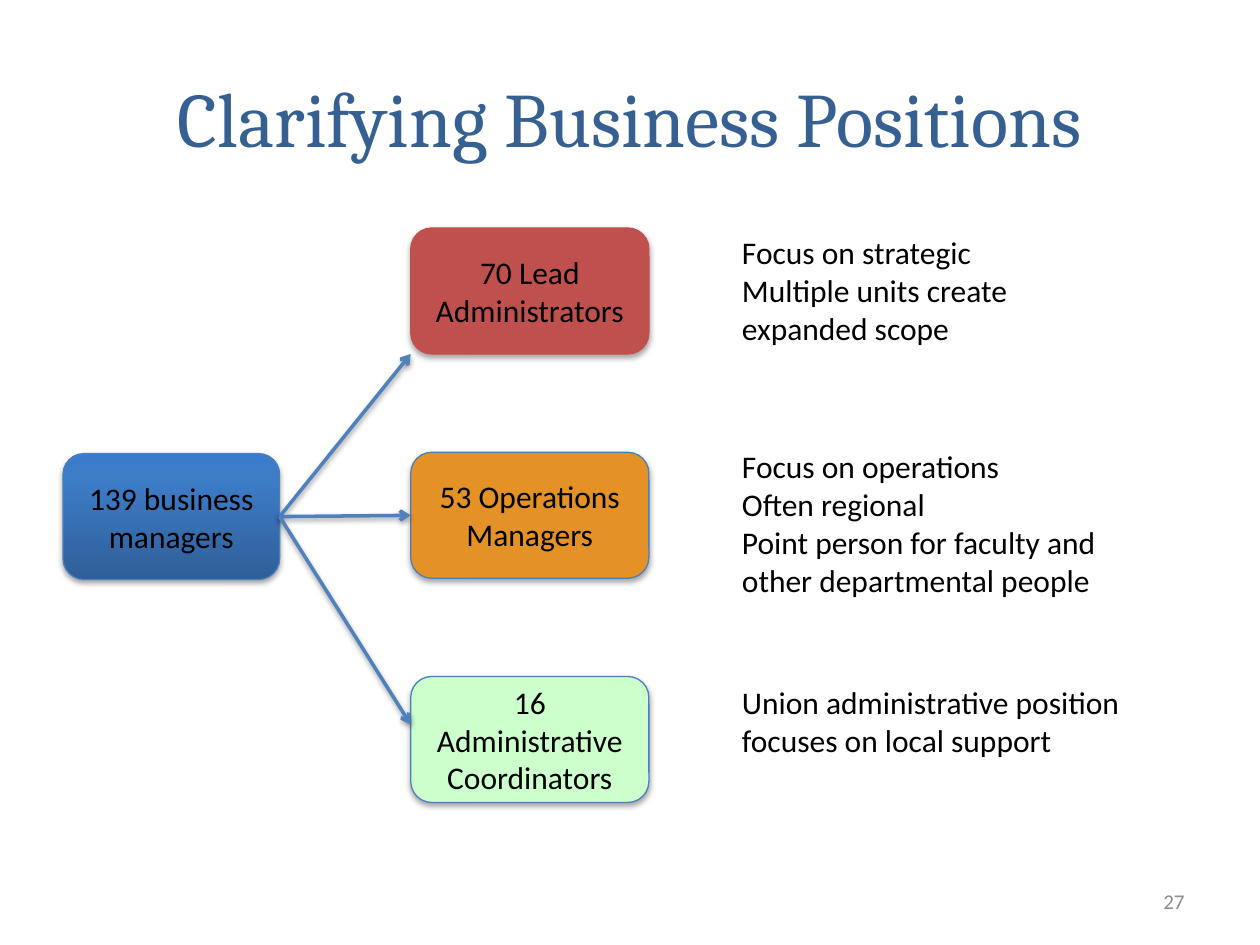
from copy import deepcopy

from lxml.etree import SubElement
from pptx import Presentation
from pptx.dml.color import RGBColor
from pptx.enum.shapes import MSO_CONNECTOR, MSO_SHAPE
from pptx.enum.text import MSO_ANCHOR, MSO_AUTO_SIZE, PP_ALIGN
from pptx.oxml.ns import qn
from pptx.util import Pt

BOX_HEIGHT = 72
MANAGERS_LEFT, MANAGERS_TOP, MANAGERS_WIDTH = 36, 259.2, 123.8
POSITION_LEFT, POSITION_WIDTH = 234.7, 136.1
FIRST_TOP, ROW_PITCH = 130.3, 128.15
NOTE_LEFT, NOTE_WIDTH = 416.9, 231.8

# label, fill, outline, arrow end, note top, note height, note lines
POSITIONS = [
    ("70 Lead Administrators", "C0504D", "C0504D", 202.3, 129.6, 72.7,
     ["Focus on strategic", "Multiple units create expanded scope"]),
    ("53 Operations Managers", "E49225", "4B7EBC", 294.5, 252, 94.3,
     ["Focus on operations", "Often regional",
      "Point person for faculty and other departmental people"]),
    ("16 Administrative Coordinators", "CCFFCC", "4B7EBC", 414, 386.6, 51.1,
     ["Union administrative position focuses on local support"]),
]


def rgb(hex_color):
    return RGBColor.from_string(hex_color)


class SlideBuilder:
    """Holds the text style and the slide being drawn."""

    font = "Calibri"
    size = 18
    ink = "000000"

    def __init__(self, slide):
        self.slide = slide

    def set_text(self, frame, lines, align=PP_ALIGN.LEFT, anchor=MSO_ANCHOR.TOP,
                 font=None, size=None, color=None):
        frame.word_wrap = True
        frame.vertical_anchor = anchor
        frame.text = "\n".join(lines)
        for paragraph in frame.paragraphs:
            paragraph.alignment = align
            paragraph.font.name = font or self.font
            paragraph.font.size = Pt(size or self.size)
            paragraph.font.color.rgb = rgb(color or self.ink)

    def shadow(self, shape, opacity, distance):
        """Cast a soft shadow straight down; opacity is in percent."""
        shape_properties = shape._element.spPr
        effects = shape_properties.find(qn("a:effectLst"))
        if effects is None:
            effects = SubElement(shape_properties, qn("a:effectLst"))
        outer = SubElement(effects, qn("a:outerShdw"), blurRad=str(Pt(3.15)),
                           dist=str(Pt(distance)), dir="5400000", rotWithShape="0")
        black = SubElement(outer, qn("a:srgbClr"), val="000000")
        SubElement(black, qn("a:alpha"), val=str(opacity * 1000))

    def title(self, text, left, top, width, height):
        title = self.slide.shapes.title
        title.left, title.top = Pt(left), Pt(top)
        title.width, title.height = Pt(width), Pt(height)
        self.set_text(title.text_frame, [text], PP_ALIGN.CENTER, MSO_ANCHOR.MIDDLE,
                      "Cambria", 44, "376092")

    def box(self, label, left, top, width, outline, fill=None):
        box = self.slide.shapes.add_shape(MSO_SHAPE.ROUNDED_RECTANGLE, Pt(left),
                                          Pt(top), Pt(width), Pt(BOX_HEIGHT))
        if fill:
            box.fill.solid()
            box.fill.fore_color.rgb = rgb(fill)
        box.line.color.rgb = rgb(outline)
        box.line.width = Pt(0.75)
        box.shadow.inherit = False
        self.shadow(box, 35, 1.8)
        self.set_text(box.text_frame, [label], PP_ALIGN.CENTER, MSO_ANCHOR.MIDDLE)
        return box

    def gradient(self, box, stops):
        """Fill from the bottom up with (position, colour) stops."""
        box.fill.gradient()
        box.fill.gradient_angle = 90
        stop_list = box._element.spPr.find(qn("a:gradFill")).find(qn("a:gsLst"))
        while len(stop_list) < len(stops):
            stop_list.append(deepcopy(stop_list[-1]))
        for stop, (position, color) in zip(box.fill.gradient_stops, stops):
            stop.position = position
            stop.color.rgb = rgb(color)

    def arrow(self, start, end):
        arrow = self.slide.shapes.add_connector(
            MSO_CONNECTOR.STRAIGHT, *(Pt(value) for value in start + end))
        arrow.line.color.rgb = rgb("4F81BD")
        arrow.line.width = Pt(2)
        SubElement(arrow.line._get_or_add_ln(), qn("a:tailEnd"), type="arrow")
        self.shadow(arrow, 38, 1.6)

    def note(self, lines, left, top, width, height, grow=True, **style):
        note = self.slide.shapes.add_textbox(Pt(left), Pt(top), Pt(width), Pt(height))
        self.set_text(note.text_frame, lines, **style)
        if grow:
            note.text_frame.auto_size = MSO_AUTO_SIZE.SHAPE_TO_FIT_TEXT


def main():
    deck = Presentation()
    deck.slide_width, deck.slide_height = Pt(720), Pt(540)
    builder = SlideBuilder(deck.slides.add_slide(deck.slide_layouts[5]))
    builder.title("Clarifying Business Positions", 36, 21.6, 648, 90)

    managers = builder.box("139 business managers", MANAGERS_LEFT, MANAGERS_TOP,
                           MANAGERS_WIDTH, "4B7EBC")
    builder.gradient(managers, [(0, "2F5F99"), (0.8, "3D7CC7"), (1, "3A7CCB")])

    for row, (label, fill, outline, *_) in enumerate(POSITIONS):
        builder.box(label, POSITION_LEFT, FIRST_TOP + row * ROW_PITCH,
                    POSITION_WIDTH, outline, fill)

    arrow_start = (MANAGERS_LEFT + MANAGERS_WIDTH, MANAGERS_TOP + BOX_HEIGHT / 2)
    for *_, arrow_end, note_top, note_height, lines in POSITIONS:
        builder.arrow(arrow_start, (POSITION_LEFT, arrow_end))
        builder.note(lines, NOTE_LEFT, note_top, NOTE_WIDTH, note_height)

    builder.note(["27"], 516, 500.5, 168, 28.8, grow=False, align=PP_ALIGN.RIGHT,
                 anchor=MSO_ANCHOR.MIDDLE, size=12, color="8C8C8C")
    deck.save("out.pptx")


if __name__ == "__main__":
    main()
